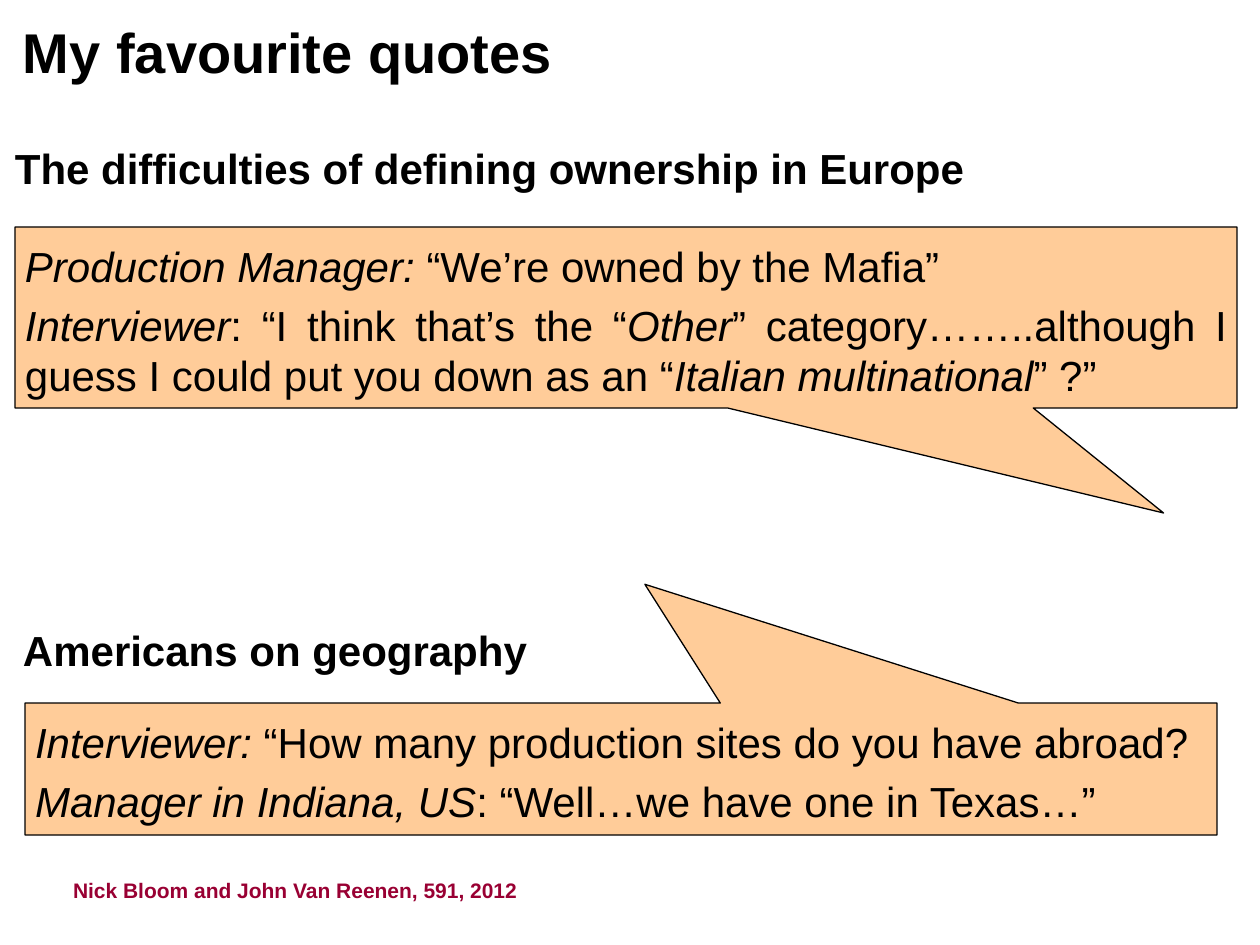
from dataclasses import dataclass

from pptx import Presentation
from pptx.dml.color import RGBColor
from pptx.enum.shapes import MSO_SHAPE
from pptx.enum.text import MSO_ANCHOR, MSO_AUTO_SIZE, PP_ALIGN
from pptx.util import Emu, Pt

EMU_PER_PX = 914400 / 126


@dataclass(frozen=True)
class Theme:
    font: str = "Arial"
    ink: RGBColor = RGBColor(0x00, 0x00, 0x00)
    speech: RGBColor = RGBColor(0xFF, 0xCC, 0x99)
    credit: RGBColor = RGBColor(0x99, 0x00, 0x33)
    title_size: Pt = Pt(32)
    body_size: Pt = Pt(24)
    credit_size: Pt = Pt(12)
    outline: Pt = Pt(0.75)
    line_gap: Pt = Pt(5)


THEME = Theme()


def px(length):
    return Emu(round(length * EMU_PER_PX))


def apply_format(target, **values):
    for attribute, value in values.items():
        setattr(target, attribute, value)


def style_run(run, size, color=THEME.ink, **emphasis):
    apply_format(run.font, name=THEME.font, size=size, **emphasis)
    run.font.color.rgb = color


def add_label(slide, box, words, size, color=THEME.ink, inset=0, wrap=True):
    """Place one bold line of text in a box that fits its height."""
    label = slide.shapes.add_textbox(*map(px, box))
    frame = label.text_frame
    apply_format(frame, word_wrap=wrap, auto_size=MSO_AUTO_SIZE.SHAPE_TO_FIT_TEXT,
                 margin_left=px(inset), margin_right=px(13),
                 margin_top=px(6), margin_bottom=px(6))
    run = frame.paragraphs[0].add_run()
    run.text = words
    style_run(run, size, color, bold=True)


def add_dialogue(slide, box, tip, lines, align):
    """Place a callout; the parts of each line alternate italic and upright."""
    callout = slide.shapes.add_shape(MSO_SHAPE.RECTANGULAR_CALLOUT, *map(px, box))
    callout.shadow.inherit = False
    callout.adjustments[0], callout.adjustments[1] = tip
    callout.fill.solid()
    callout.fill.fore_color.rgb = THEME.speech
    callout.line.color.rgb = THEME.ink
    callout.line.width = THEME.outline

    frame = callout.text_frame
    apply_format(frame, word_wrap=True, vertical_anchor=MSO_ANCHOR.MIDDLE,
                 margin_left=px(10), margin_right=px(10),
                 margin_top=px(15), margin_bottom=px(10))
    for index, parts in enumerate(lines):
        paragraph = frame.add_paragraph() if index else frame.paragraphs[0]
        paragraph.alignment = align
        if index:
            paragraph.space_before = THEME.line_gap
        for position, words in enumerate(parts):
            run = paragraph.add_run()
            run.text = words
            style_run(run, THEME.body_size, italic=position % 2 == 0)


def build_quotes_slide(slide):
    add_label(slide, (60, 872, 474, 38), "Nick Bloom and John Van Reenen, 591, 2012",
              THEME.credit_size, THEME.credit, inset=13, wrap=False)
    add_label(slide, (8, 11, 1270, 81), "My favourite quotes", THEME.title_size, inset=15)

    add_dialogue(slide, (25, 703, 1192, 132), (0.02, -1.4), [
        ("Interviewer:", " “How many production sites do you have abroad?"),
        ("Manager in Indiana, US", ": “Well…we have one in Texas…”"),
    ], PP_ALIGN.LEFT)
    add_label(slide, (23, 619, 1270, 63), "Americans on geography", THEME.body_size)

    add_dialogue(slide, (15, 227, 1222, 181), (0.44, 1.08), [
        ("Production Manager: ", "“We’re owned by the Mafia”"),
        ("Interviewer", ": “I think that’s the “", "Other",
         "” category……..although I guess I could put you down as an “",
         "Italian multinational", "” ?”"),
    ], PP_ALIGN.JUSTIFY)
    add_label(slide, (15, 137, 1270, 63),
              "The difficulties of defining ownership in Europe", THEME.body_size)


def main():
    deck = Presentation()
    apply_format(deck, slide_width=px(1260), slide_height=px(945))
    build_quotes_slide(deck.slides.add_slide(deck.slide_layouts[6]))
    deck.save("out.pptx")


if __name__ == "__main__":
    main()
